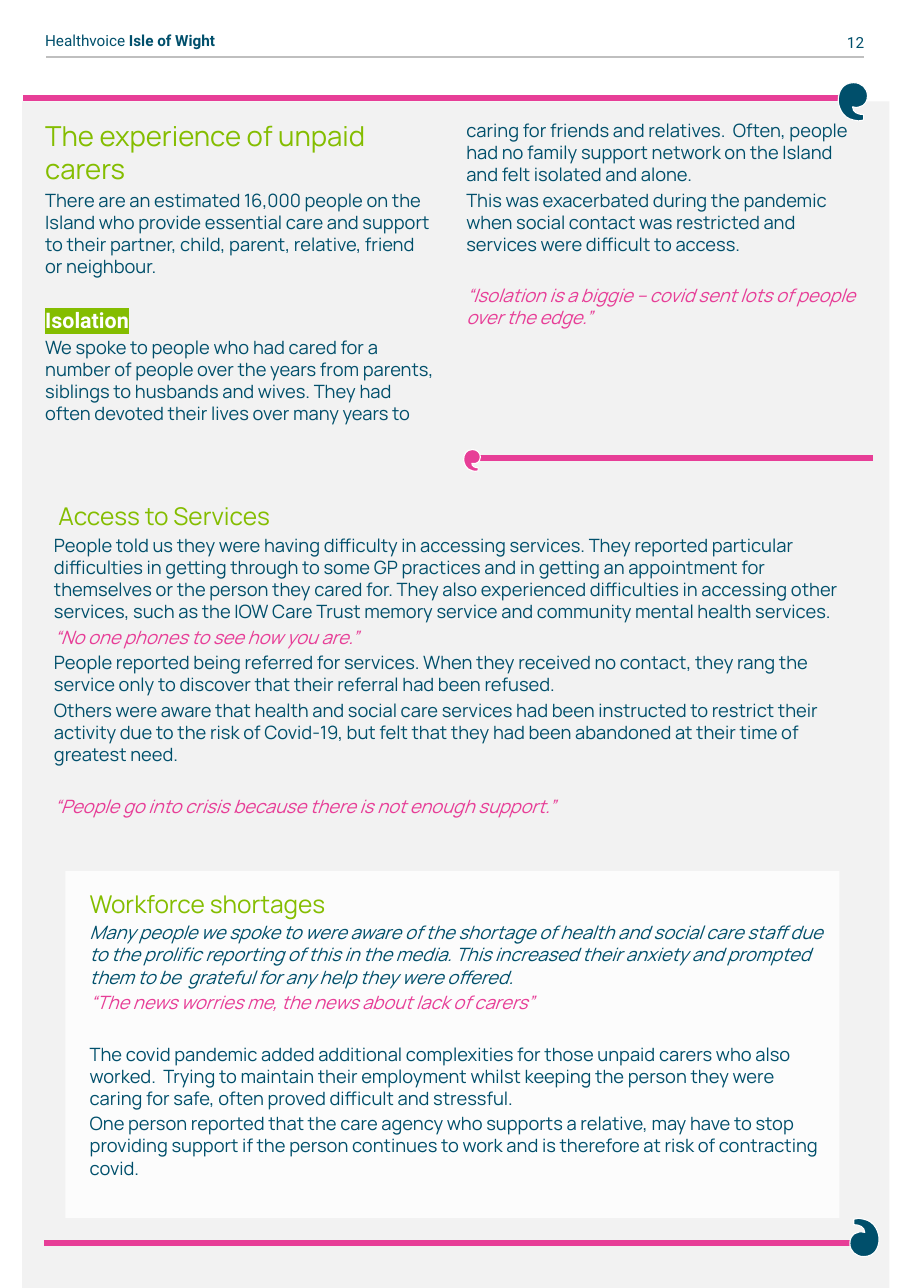
from lxml.etree import SubElement
from pptx import Presentation
from pptx.dml.color import RGBColor
from pptx.enum.shapes import MSO_CONNECTOR as CONN, MSO_SHAPE as SHAPE
from pptx.enum.text import MSO_ANCHOR as ANCHOR, MSO_AUTO_SIZE as FIT, PP_ALIGN as ALIGN
from pptx.oxml.ns import qn
from pptx.util import Inches, Pt

NAVY = RGBColor(0x00, 0x4F, 0x6B)
GREEN = RGBColor(0x84, 0xBD, 0x00)
PINK = RGBColor(0xE7, 0x3E, 0x97)
GREY = RGBColor(0xBF, 0xBF, 0xBF)
PALE = RGBColor(0xF2, 0xF2, 0xF2)
WHITE = RGBColor(0xFF, 0xFF, 0xFF)

COLS, ROWS = 827, 1169  # page grid, cells of a hundredth of an inch
NEW_PASSAGE = 16.8  # extra points before a paragraph that opens a new passage

HEADER = dict(name="Roboto", size=Pt(10), color=NAVY)
HEADER_BOLD = dict(HEADER, bold=True)
TITLE = dict(name="Manrope", size=Pt(18), color=GREEN)
HEADING = dict(TITLE, size=Pt(16))
TAG = dict(name="Roboto", size=Pt(14), color=WHITE, bold=True, highlight=GREEN)
BODY = dict(name="Manrope", size=Pt(12), color=NAVY)
LEAD = dict(BODY, italic=True)
QUOTE = dict(LEAD, color=PINK)

# Speech mark in grid cells: start, six curves (two controls and an end), last corner
MARK_START = (23, 34)
MARK_CURVES = [
    (20, 35), (17, 35), (14, 34), (3, 32), (0, 21), (0, 16),
    (0, 8), (4, 0), (14, 0), (21, 0), (26.5, 5), (26.5, 12),
    (26.5, 20), (20, 24), (13, 22), (13, 27), (18, 29), (23, 29),
]


def cells(*counts):
    return [Inches(n / 100) for n in counts]


def add_run(p, text, style):
    r = p.add_run()
    r.text = text
    for key, value in style.items():
        if key == "color":
            r.font.color.rgb = value
        elif key != "highlight":
            setattr(r.font, key, value)
    if "highlight" in style:
        rPr = r.font._element
        mark = SubElement(rPr, qn("a:highlight"))
        SubElement(mark, qn("a:srgbClr")).set("val", str(style["highlight"]))
        rPr.find(qn("a:solidFill")).addnext(mark)


def add_text(s, box, paragraphs, align=ALIGN.LEFT, right=10):
    """Paragraphs are (style, text) or (style, text, extra points before)."""
    tf = s.shapes.add_textbox(*cells(*box)).text_frame
    settings = dict(word_wrap=True, auto_size=FIT.NONE, vertical_anchor=ANCHOR.TOP,
                    margin_left=0, margin_top=0, margin_bottom=0,
                    margin_right=cells(right)[0])
    for key, value in settings.items():
        setattr(tf, key, value)
    for i, (style, text, *extra) in enumerate(paragraphs):
        p = tf.paragraphs[0] if i == 0 else tf.add_paragraph()
        p.alignment = align
        p.space_before = Pt(0.2 * style["size"].pt + sum(extra)) if i else Pt(0)
        add_run(p, text, style)
    return tf


def add_panel(s, box, color, opacity=100):
    sp = s.shapes.add_shape(SHAPE.RECTANGLE, *cells(*box))
    sp.shadow.inherit = False
    sp.fill.solid()
    sp.fill.fore_color.rgb = color
    sp.line.fill.background()
    if opacity < 100:
        clr = sp.fill._xPr.find(qn("a:solidFill"))[0]
        SubElement(clr, qn("a:alpha")).set("val", str(opacity * 1000))


def add_rule(s, x, y, w, color=PINK, weight=3.75):
    line = s.shapes.add_connector(CONN.STRAIGHT, *cells(x, y, x + w, y))
    line.line.color.rgb = color
    line.line.width = Pt(weight)
    SubElement(line._element.spPr, qn("a:effectLst"))


def curve_segments(sp, count):
    """Turn the first count straight segments, by threes, into Bezier curves."""
    segments = list(sp._element.iter(qn("a:lnTo")))[:count]
    for c1, c2, end in zip(segments[::3], segments[1::3], segments[2::3]):
        curve = SubElement(c1.getparent(), qn("a:cubicBezTo"))
        c1.addprevious(curve)
        for segment in (c1, c2, end):
            curve.append(segment[0])
            segment.getparent().remove(segment)


def add_mark(s, x, y, color=NAVY, size=1.0, rotation=0):
    fine = 100
    start, *points = [(px * fine, py * fine) for px, py in [MARK_START, *MARK_CURVES]]
    builder = s.shapes.build_freeform(*start, scale=cells(size)[0] / fine)
    builder.add_line_segments(points, close=True)
    sp = builder.convert_to_shape(*cells(x, y))
    curve_segments(sp, len(points))
    sp.shadow.inherit = False
    sp.fill.solid()
    sp.fill.fore_color.rgb = color
    sp.line.color.rgb = WHITE
    sp.line.width = Pt(0.75)
    sp.rotation = rotation


def page_header(s, x, y, w, h):
    tf = add_text(s, (x, y, w / 2, h), [(HEADER, "Healthvoice")])
    add_run(tf.paragraphs[0], " Isle of Wight", HEADER_BOLD)
    add_text(s, (x + w / 2, y + 1.5, w / 2, h), [(HEADER, "12")], ALIGN.RIGHT, right=0)
    add_rule(s, x + 1, y + 23.5, w - 1, GREY, 1)


def page_frame(s, x, y, w, h):
    add_panel(s, (x, y, w, h), PALE)
    add_rule(s, x + 1, y - 3, 743)
    add_mark(s, x + 741, y - 17)
    add_rule(s, x + 20, y + 1036, 743)
    add_mark(s, x + 751.5, y + 1013.5, rotation=180)


def experience_section(s, x, y, w, h):
    tf = add_text(s, (x, y, w, h), [
        (TITLE, "The experience of unpaid carers"),
        (BODY, "There are an estimated 16,000 people on the Island who provide essential care and "
               "support to their partner, child, parent, relative, friend or neighbour."),
        (TAG, "Isolation", NEW_PASSAGE),
        (BODY, "We spoke to people who had cared for a number of people over the years from parents, "
               "siblings to husbands and wives. They had often devoted their lives over many years to "
               "caring for friends and relatives.  Often, people had no family support network on the "
               "Island and felt isolated and alone."),
        (BODY, "This was exacerbated during the pandemic when social contact was restricted and "
               "services were difficult to access."),
        (QUOTE, "“Isolation is a biggie – covid sent lots of people over the edge.”", NEW_PASSAGE),
    ])
    body = tf._txBody.bodyPr
    body.set("numCol", "2")
    body.set("spcCol", str(cells(28)[0]))
    add_rule(s, x + 384.5, y + h + 15, 367)
    add_mark(s, x + 380, y + h + 7, PINK, 0.57)


def access_section(s, *box):
    tf = add_text(s, box, [
        (HEADING, "Access to Services"),
        (BODY, "People told us they were having difficulty in accessing services. They reported "
               "particular difficulties in getting through to some GP practices and in getting an "
               "appointment for themselves or the person they cared for. They also experienced "
               "difficulties in accessing other services, such as the IOW Care Trust memory service and "
               "community mental health services."),
        (QUOTE, "“No one phones to see how you are.”"),
        (BODY, "People reported being referred for services. When they received no contact, they rang "
               "the service only to discover that their referral had been refused."),
        (BODY, "Others were aware that health and social care services had been instructed to restrict "
               "their activity due to the risk of Covid-19, but felt that they had been abandoned at "
               "their time of greatest need."),
        (QUOTE, "“People go into crisis because there is not enough support.”", NEW_PASSAGE),
    ])
    tf.paragraphs[0]._p.get_or_add_pPr().set("marL", str(cells(4)[0]))


def workforce_section(s, x, y, w, h):
    add_panel(s, (x, y, w, h), WHITE, opacity=80)
    add_text(s, (x + 22, y + 16, w - 21, h - 32), [
        (HEADING, "Workforce shortages"),
        (LEAD, "Many people we spoke to were aware of the shortage of health and social care staff due "
               "to the prolific reporting of this in the media. This increased their anxiety and "
               "prompted them to be  grateful for any help they were offered."),
        (QUOTE, "“The news worries me, the news about lack of carers”"),
        (BODY, "The covid pandemic added additional complexities for those unpaid carers who also "
               "worked.  Trying to maintain their employment whilst keeping the person they were "
               "caring for safe, often proved difficult and stressful.", NEW_PASSAGE),
        (BODY, "One person reported that the care agency who supports a relative, may have to stop "
               "providing support if the person continues to work and is therefore at risk of "
               "contracting covid."),
    ])


def main():
    prs = Presentation()
    prs.slide_width, prs.slide_height = cells(COLS, ROWS)
    s = prs.slides.add_slide(prs.slide_layouts[6])
    page_header(s, 41, 28.5, 743.5, 30)
    page_frame(s, 20, 92, 787.5, ROWS - 92)
    experience_section(s, 41, 108, 746.5, 293)
    access_section(s, 49, 454.7, 744, 313)
    workforce_section(s, 59.4, 790.5, 702.6, 315)
    prs.save("out.pptx")


if __name__ == "__main__":
    main()
